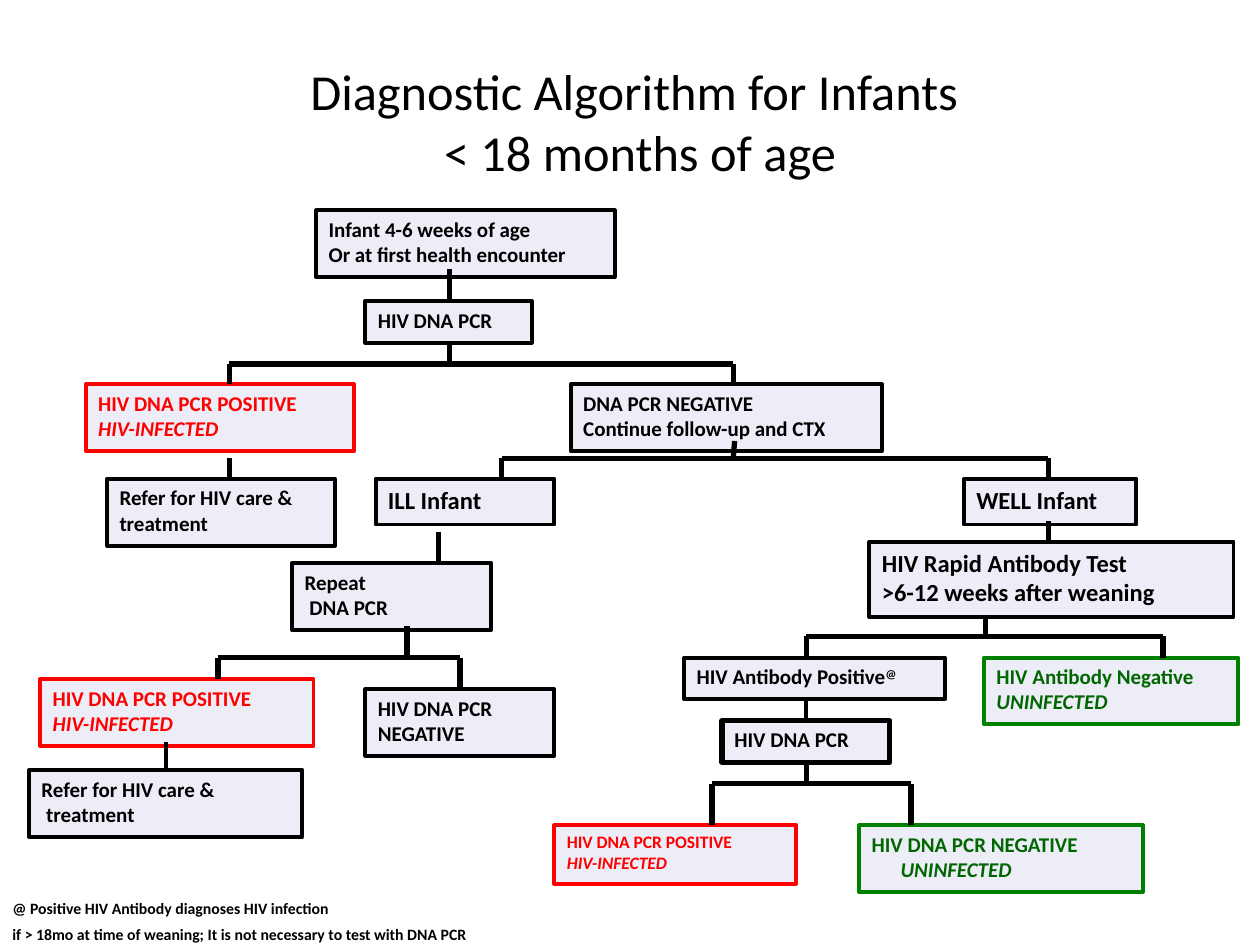
from pptx import Presentation
from pptx.dml.color import RGBColor
from pptx.enum.shapes import MSO_CONNECTOR, MSO_SHAPE
from pptx.enum.text import MSO_ANCHOR, PP_ALIGN
from pptx.oxml.ns import qn
from pptx.util import Pt
from lxml.etree import SubElement

FONT = "Calibri"
BLACK, RED, GREEN, DARK_GREEN = "000000", "FF0000", "008000", "006600"
BOX_FILL = "EDEDF7"
LINE_WIDTH, BORDER_WIDTH = 3, 2.25

# Content: a paragraph is a string or a list of (text, format) runs
TITLE = ["Diagnostic Algorithm for Infants \v< 18 months of age"]
FOOTNOTE = [
    "@ Positive HIV Antibody diagnoses HIV infection",
    "if > 18mo at time of weaning; It is not necessary to test with DNA PCR",
]
INFECTED = ["HIV DNA PCR POSITIVE", [("HIV-INFECTED", {"italic": True})]]
UNINFECTED = [("UNINFECTED", {"italic": True})]
ANTIBODY_POSITIVE = [("HIV Antibody Positive", {}), ("@", {"baseline": 30000})]

RED_STYLE = {"color": RED, "border": RED}
GREEN_STYLE = {"color": DARK_GREEN, "border": GREEN}

# Boxes: left, top, width, paragraphs, style
BOXES = [
    (180.7, 120.2, 170.6, ["Infant 4-6 weeks of age", "Or at first health encounter"], {}),
    (208.8, 172, 95, ["HIV DNA PCR"], {}),
    (49, 219.6, 153.4, INFECTED, RED_STYLE),
    (326.2, 219.6, 177.8, ["DNA PCR NEGATIVE", "Continue follow-up and CTX"], {}),
    (61.2, 273.6, 130.3, ["Refer for HIV care &", "treatment"], {}),
    (214.6, 273.6, 102.2, ["ILL Infant"], {"size": 14}),
    (550.8, 273.6, 98.6, ["WELL Infant"], {"size": 14}),
    (167, 321.8, 113.8, ["Repeat", " DNA PCR"], {}),
    (496.8, 309.6, 208.1, ["HIV Rapid Antibody Test", ">6-12 weeks after weaning"], {"size": 14}),
    (23, 388, 156.2, INFECTED, RED_STYLE),
    (16.6, 440, 156.2, ["Refer for HIV care &", " treatment"], {}),
    (208.8, 393.8, 108, ["HIV DNA PCR", "NEGATIVE"], {}),
    (391, 375.8, 149, [ANTIBODY_POSITIVE], {}),
    (562.3, 375.8, 145.4, ["HIV Antibody Negative", UNINFECTED], GREEN_STYLE),
    (412.6, 411.8, 95.8, ["HIV DNA PCR"], {"border_width": 3}),
    (316.8, 471.6, 138.2, INFECTED, {"size": 10, **RED_STYLE}),
    (491, 471.6, 162, ["HIV DNA PCR NEGATIVE", UNINFECTED], {"last_indent": 16.5, **GREEN_STYLE}),
]

# Stems: top x, top y, bottom x, bottom y, width
STEMS = [
    (257, 154, 257, 172, LINE_WIDTH),
    (257, 196, 257, 208, LINE_WIDTH),
    (131, 262, 131, 273.6, LINE_WIDTH),
    (419.8, 252, 419, 262, LINE_WIDTH),
    (599, 298, 599, 309.6, LINE_WIDTH),
    (250.6, 303.8, 250.6, 321.8, LINE_WIDTH),
    (232.6, 357.8, 232.6, 375.8, LINE_WIDTH),
    (95, 424, 95, 440, BORDER_WIDTH),
    (563, 352, 563, 363.6, LINE_WIDTH),
    (460.8, 399.6, 460.8, 411.8, BORDER_WIDTH),
    (460.8, 435.6, 460.8, 447.8, LINE_WIDTH),
]

# Forks: left x, right x, bar y, left drop end, right drop end
FORKS = [
    (131, 419, 208, 219.6, 219.6),
    (286.6, 599, 262, 273.6, 273.6),
    (124.6, 262.8, 375.8, 388, 393.8),
    (460.8, 664.6, 363.6, 375.8, 375.8),
    (406.8, 520.6, 447.8, 471.6, 471.6),
]

presentation = Presentation()
presentation.slide_width, presentation.slide_height = Pt(720), Pt(540)
slide = presentation.slides.add_slide(presentation.slide_layouts[6])


def rgb(color):
    return RGBColor.from_string(color)


def write_text(shape, paragraphs, size=12, color=BLACK, bold=True, align=PP_ALIGN.LEFT,
               anchor=MSO_ANCHOR.TOP, gap=0, last_indent=0):
    frame = shape.text_frame
    frame.word_wrap = True
    frame.vertical_anchor = anchor
    for index, content in enumerate(paragraphs):
        paragraph = frame.add_paragraph() if index else frame.paragraphs[0]
        paragraph.alignment = align
        paragraph.space_before = Pt(gap if index else 0)
        runs = [(content, {})] if isinstance(content, str) else content
        for text, run_format in runs:
            for part_index, part in enumerate(text.split("\v")):
                if part_index:
                    paragraph.add_line_break()
                run = paragraph.add_run()
                run.text = part
                font = run.font
                font.name, font.size, font.bold = FONT, Pt(size), bold
                font.italic = run_format.get("italic", False)
                font.color.rgb = rgb(color)
                if "baseline" in run_format:
                    run._r.get_or_add_rPr().set("baseline", str(run_format["baseline"]))
    if last_indent:
        properties = paragraph._p.get_or_add_pPr()
        properties.set("marL", str(Pt(last_indent)))
        properties.set("indent", "0")


def add_box(left, top, width, paragraphs, border=BLACK, border_width=BORDER_WIDTH,
            size=12, **text_format):
    height = 1.2 * size * len(paragraphs) + 9.4
    shape = slide.shapes.add_shape(MSO_SHAPE.RECTANGLE, Pt(left), Pt(top), Pt(width), Pt(height))
    shape.shadow.inherit = False
    shape.fill.solid()
    shape.fill.fore_color.rgb = rgb(BOX_FILL)
    shape.line.color.rgb = rgb(border)
    shape.line.width = Pt(border_width)
    write_text(shape, paragraphs, size=size, **text_format)


def add_line(x1, y1, x2, y2, width=LINE_WIDTH):
    connector = slide.shapes.add_connector(MSO_CONNECTOR.STRAIGHT, Pt(x1), Pt(y1), Pt(x2), Pt(y2))
    connector.line.color.rgb = rgb(BLACK)
    connector.line.width = Pt(width)
    SubElement(connector._element.spPr, qn("a:effectLst"))


# Title
title = slide.shapes.add_textbox(Pt(41.8), Pt(30.2), Pt(648), Pt(77.8))
write_text(title, TITLE, size=28.8, bold=False, align=PP_ALIGN.CENTER, anchor=MSO_ANCHOR.MIDDLE)

# Flow chart boxes
for left, top, width, paragraphs, style in BOXES:
    add_box(left, top, width, paragraphs, **style)

# Connecting lines
for stem in STEMS:
    add_line(*stem)
for left, right, bar, left_end, right_end in FORKS:
    add_line(left, bar, right, bar)
    add_line(left, bar, left, left_end)
    add_line(right, bar, right, right_end)

# Footnote
footnote = slide.shapes.add_textbox(Pt(0), Pt(509.8), Pt(314.6), Pt(44.6))
write_text(footnote, FOOTNOTE, size=9, gap=4.5)

presentation.save("out.pptx")
